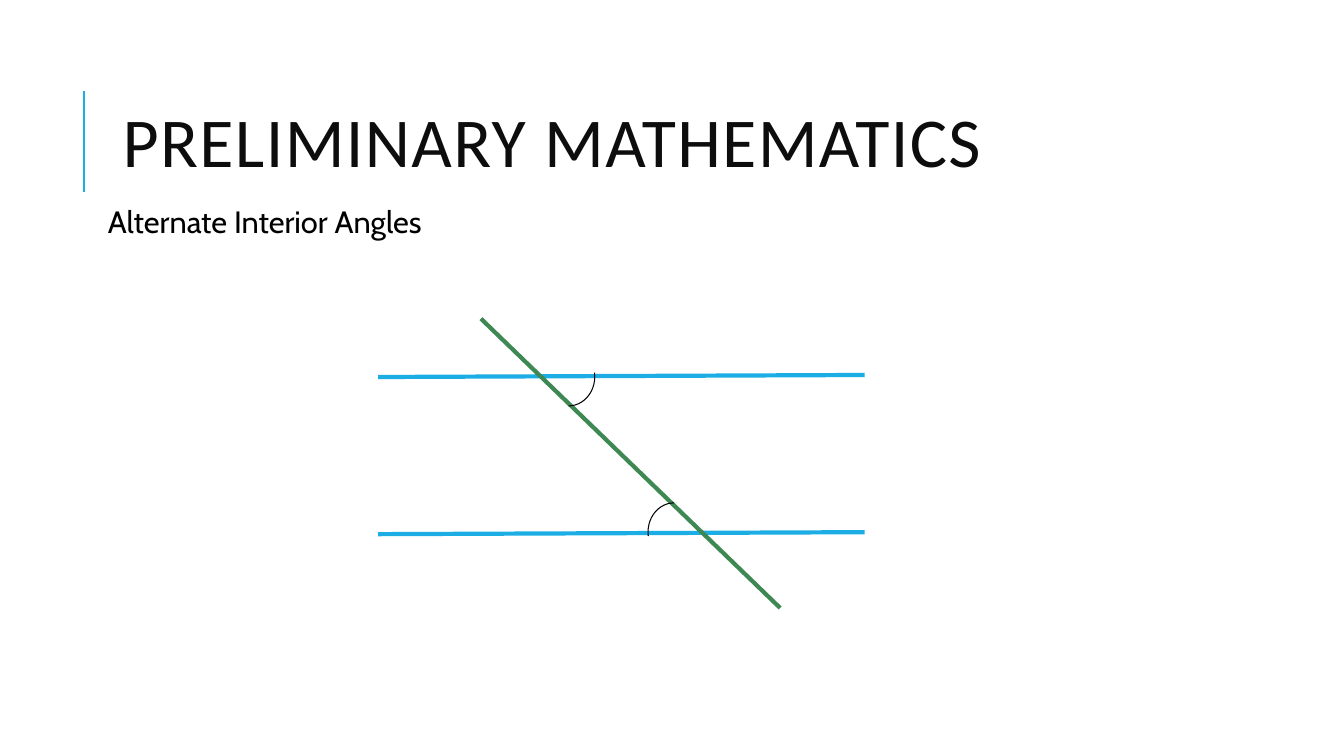
from lxml import etree
from pptx import Presentation
from pptx.dml.color import RGBColor
from pptx.enum.shapes import MSO_CONNECTOR, MSO_SHAPE
from pptx.enum.text import MSO_ANCHOR
from pptx.oxml.ns import qn
from pptx.util import Cm, Pt

STRAIGHT = MSO_CONNECTOR.STRAIGHT
ARC = MSO_SHAPE.ARC
MIDDLE = MSO_ANCHOR.MIDDLE
TOP = MSO_ANCHOR.TOP

BLUE = RGBColor(0x1C, 0xAD, 0xE4)
GREEN = RGBColor(0x3E, 0x88, 0x53)
BLACK = RGBColor(0, 0, 0)
NEAR_BLACK = RGBColor(0x0D, 0x0D, 0x0D)


def add_segment(slide, start, end, color, width):
    segment = slide.shapes.add_connector(
        STRAIGHT, Cm(start[0]), Cm(start[1]), Cm(end[0]), Cm(end[1])
    )
    segment.line.color.rgb = color
    segment.line.width = Pt(width)
    etree.SubElement(segment._element.spPr, qn("a:effectLst"))


def add_angle_mark(slide, left, top, rotation):
    mark = slide.shapes.add_shape(ARC, Cm(left), Cm(top), Cm(1.32), Cm(1.47))
    mark.adjustments[0] = 210.72
    mark.adjustments[1] = 54
    mark.rotation = rotation
    mark.shadow.inherit = False
    mark.fill.background()
    mark.line.color.rgb = BLACK
    mark.line.width = Pt(0.75)


def add_text(slide, box, text, font, size, color, anchor, line_spacing):
    frame = slide.shapes.add_textbox(*(Cm(length) for length in box)).text_frame
    frame.word_wrap = True
    frame.vertical_anchor = anchor
    paragraph = frame.paragraphs[0]
    paragraph.line_spacing = line_spacing
    run = paragraph.add_run()
    run.text = text
    run.font.name = font
    run.font.size = Pt(size)
    run.font.color.rgb = color
    return frame, paragraph, run


def add_title(slide):
    add_segment(slide, (2.11, 4.83), (2.11, 2.29), BLUE, 1.5)
    _, _, run = add_text(
        slide, (2.84, 1.63, 27, 4.17), "PRELIMINARY MATHEMATICS",
        "Calibri", 50, NEAR_BLACK, MIDDLE, 0.8,
    )
    run.font._element.set("spc", "100")


def add_subtitle(slide):
    frame, paragraph, _ = add_text(
        slide, (2.34, 5.08, 28.3, 1.6), "Alternate Interior Angles",
        "Cabin", 22, BLACK, TOP, 0.9,
    )
    frame.margin_left = frame.margin_right = Cm(0.13)
    frame.margin_top = frame.margin_bottom = Cm(0.13)
    paragraph.space_before = Pt(12)
    paragraph.space_after = Pt(2)
    paragraph._p.get_or_add_pPr().set("marL", str(Cm(0.25)))


def add_angle_diagram(slide):
    for left_y in (9.5, 13.46):
        add_segment(slide, (9.53, left_y), (21.79, left_y - 0.05), BLUE, 3)
    add_segment(slide, (12.12, 8.03), (19.66, 15.32), GREEN, 3)
    add_angle_mark(slide, 13.67, 8.76, 0)
    add_angle_mark(slide, 16.33, 12.67, 180)


def main():
    presentation = Presentation()
    presentation.slide_width = Cm(33.87)
    presentation.slide_height = Cm(19.05)
    slide = presentation.slides.add_slide(presentation.slide_layouts[6])
    add_title(slide)
    add_subtitle(slide)
    add_angle_diagram(slide)
    presentation.save("out.pptx")


if __name__ == "__main__":
    main()
